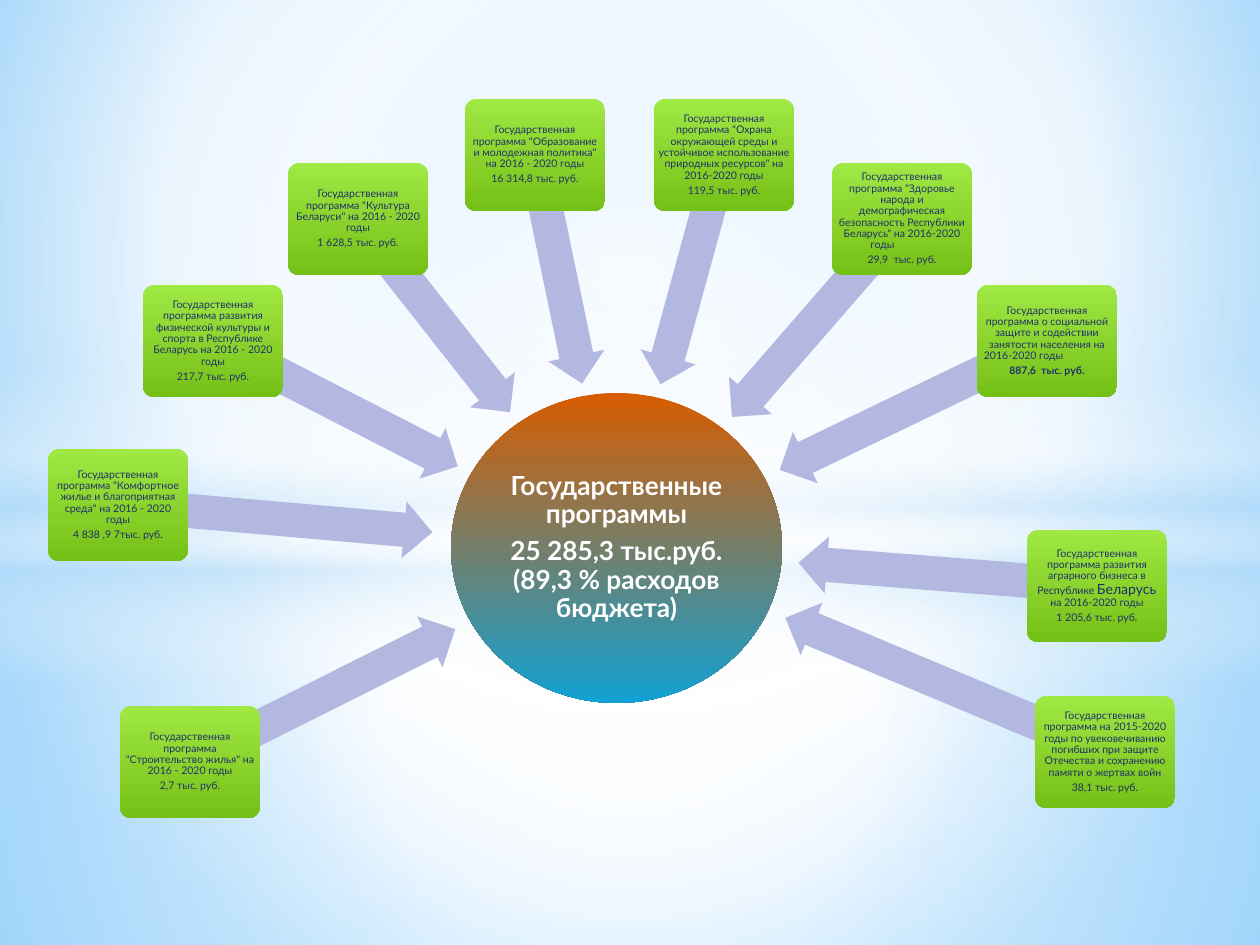
"""Build a radial slide of state programmes feeding one central total."""
from pptx import Presentation
from pptx.dml.color import RGBColor
from pptx.enum.shapes import MSO_SHAPE as SHAPE
from pptx.enum.text import MSO_ANCHOR as ANCHOR, PP_ALIGN as ALIGN
from pptx.oxml import parse_xml
from pptx.oxml.ns import nsdecls, qn
from pptx.util import Pt

PX = 914400 / 126
FONT = "Lato"
COLOURS = {
    "white": "FFFFFF", "sky": "9ED5FF", "azure": "5BB9FF", "mist": "B4DCFA",
    "orange": "D85C00", "blue": "11A1D4", "lime": "A0E844", "green": "75C016",
    "lavender": "B2B8E0", "navy": "21306A",
}


def paint(fill, holder, stops, focus=None):
    """Fill with (position, colour, opacity) stops, downwards or around a focus."""
    fill.solid()
    marks = "".join(
        f'<a:gs pos="{position * 1000}"><a:srgbClr val="{COLOURS[colour]}">'
        f'<a:alpha val="{opacity * 1000}"/></a:srgbClr></a:gs>'
        for position, colour, opacity in stops)
    direction = '<a:lin ang="5400000" scaled="0"/>'
    if focus:
        sides = " ".join(f'{side}="{inset * 1000}"' for side, inset in zip("ltrb", focus))
        direction = f'<a:path path="circle"><a:fillToRect {sides}/></a:path>'
    gradient = parse_xml(f'<a:gradFill {nsdecls("a")} rotWithShape="1">'
                         f'<a:gsLst>{marks}</a:gsLst>{direction}</a:gradFill>')
    holder.replace(holder.find(qn("a:solidFill")), gradient)


def write(shape, paragraphs, size, colour, bold=(False, False), large=None):
    """Write centred paragraphs; pieces between bars take the large size."""
    frame = shape.text_frame
    frame.word_wrap = True
    frame.vertical_anchor = ANCHOR.MIDDLE
    frame.margin_left = frame.margin_right = round(PX)
    frame.margin_top = frame.margin_bottom = round(PX)
    for index, text in enumerate(paragraphs):
        paragraph = frame.add_paragraph() if index else frame.paragraphs[0]
        paragraph.alignment = ALIGN.CENTER
        paragraph.line_spacing = 0.9
        paragraph.space_after = Pt(round(size * 0.35, 1))
        for part, piece in enumerate(text.split("|")):
            run = paragraph.add_run()
            run.text = piece
            run.font.name = FONT
            run.font.size = Pt(large if part % 2 else size)
            run.font.bold = bold[index]
            run.font.color.rgb = RGBColor.from_string(COLOURS[colour])


deck = Presentation()
deck.slide_width, deck.slide_height = round(1260 * PX), round(945 * PX)
slide = deck.slides.add_slide(deck.slide_layouts[6])
backdrop = slide.background.fill
backdrop.solid()
paint(backdrop, slide.element.xpath(".//p:bgPr")[0],
      [(0, "sky", 100), (60, "white", 100), (100, "azure", 100)], (20, 10, 20, 60))

MIDDLE = (50, 50, 50, 50)
gradient_shapes = [
    (SHAPE.RECTANGLE, (0, 533, 1260, 412),
     [(0, "white", 91), (37, "white", 76), (100, "mist", 79)], MIDDLE),
    (SHAPE.RECTANGLE, (0, 0, 1260, 533),
     [(0, "white", 89), (48, "white", 62), (100, "mist", 79)], MIDDLE),
    (SHAPE.RECTANGLE, (0, 365, 1260, 315),
     [(0, "white", 0), (29, "white", 30), (45, "mist", 40),
      (55, "white", 26), (65, "mist", 60), (100, "white", 0)], None),
    (SHAPE.OVAL, (0, 221, 1260, 703), [(0, "white", 100), (54, "white", 0)], MIDDLE),
    (SHAPE.OVAL, (451, 393, 331, 310), [(0, "orange", 100), (100, "blue", 100)], None),
]
for kind, bounds, stops, focus in gradient_shapes:
    hub = slide.shapes.add_shape(kind, *(round(length * PX) for length in bounds))
    hub.shadow.inherit = False
    hub.line.fill.background()
    paint(hub.fill, hub.element.spPr, stops, focus)
write(hub, ["Государственные программы", "25 285,3 тыс.руб. (89,3 % расходов бюджета)"],
      15, "white", bold=(True, True))

CARD_WIDTH, CARD_HEIGHT, ARROW_HEIGHT = 140, 112, 57
programmes = [
    ((120, 706), (174, 667, 297), 153.4,
     'Государственная программа "Строительство жилья" на 2016 - 2020 годы',
     "2,7 тыс. руб.", False),
    ((48, 449), (117, 490, 316), 185,
     'Государственная программа "Комфортное жилье и благоприятная среда" на 2016 - 2020 годы',
     "4 838 ,9 7тыс. руб.", False),
    ((143, 285), (198, 375, 275), 207.2,
     "Государственная программа развития физической культуры и спорта "
     "в Республике Беларусь на 2016 - 2020 годы", "217,7 тыс. руб.", False),
    ((288, 163), (311, 287, 246), 231.8,
     'Государственная программа "Культура Беларуси" на 2016 - 2020 годы',
     "1 628,5 тыс. руб.", False),
    ((465, 99), (442, 241, 233), 258.3,
     'Государственная программа "Образование и молодежная политика" на 2016 - 2020 годы',
     "16 314,8 тыс. руб.", False),
    ((654, 99), (573, 241, 238), 285.3,
     'Государственная программа "Охрана окружающей среды и устойчивое '
     'использование природных ресурсов" на 2016-2020 годы', "119,5 тыс. руб.", False),
    ((832, 163), (687, 290, 261), 311,
     'Государственная программа "Здоровье народа и демографическая безопасность '
     'Республики Беларусь" на 2016-2020 годы\t', "29,9  тыс. руб.", False),
    ((977, 285), (765, 377, 297), 334.3,
     "Государственная программа о социальной защите и содействии занятости "
     "населения на 2016-2020 годы\t", "887,6  тыс. руб.", True),
    ((1027, 530), (798, 546, 300), 4.5,
     "Государственная программа развития аграрного бизнеса в Республике "
     "|Беларусь| на 2016-2020 годы", "1 205,6 тыс. руб.", False),
    ((1035, 696), (772, 656, 345), 22.7,
     "Государственная программа на 2015-2020 годы по увековечиванию погибших "
     "при защите Отечества и сохранению памяти о жертвах войн", "38,1 тыс. руб.", False),
]
for corner, reach, angle, programme, amount, bold_amount in programmes:
    arrow = slide.shapes.add_shape(
        SHAPE.LEFT_ARROW, *(round(length * PX) for length in (*reach, ARROW_HEIGHT)))
    arrow.rotation = angle
    arrow.adjustments[0], arrow.adjustments[1] = 0.6, 0.5
    arrow.fill.solid()
    arrow.fill.fore_color.rgb = RGBColor.from_string(COLOURS["lavender"])
    card = slide.shapes.add_shape(
        SHAPE.ROUNDED_RECTANGLE,
        *(round(length * PX) for length in (*corner, CARD_WIDTH, CARD_HEIGHT)))
    card.adjustments[0] = 0.1
    paint(card.fill, card.element.spPr, [(0, "lime", 100), (100, "green", 100)])
    for part in (arrow, card):
        part.shadow.inherit = False
        part.line.fill.background()
    write(card, [programme, amount], 6, "navy", bold=(False, bold_amount), large=8)

deck.save("out.pptx")
